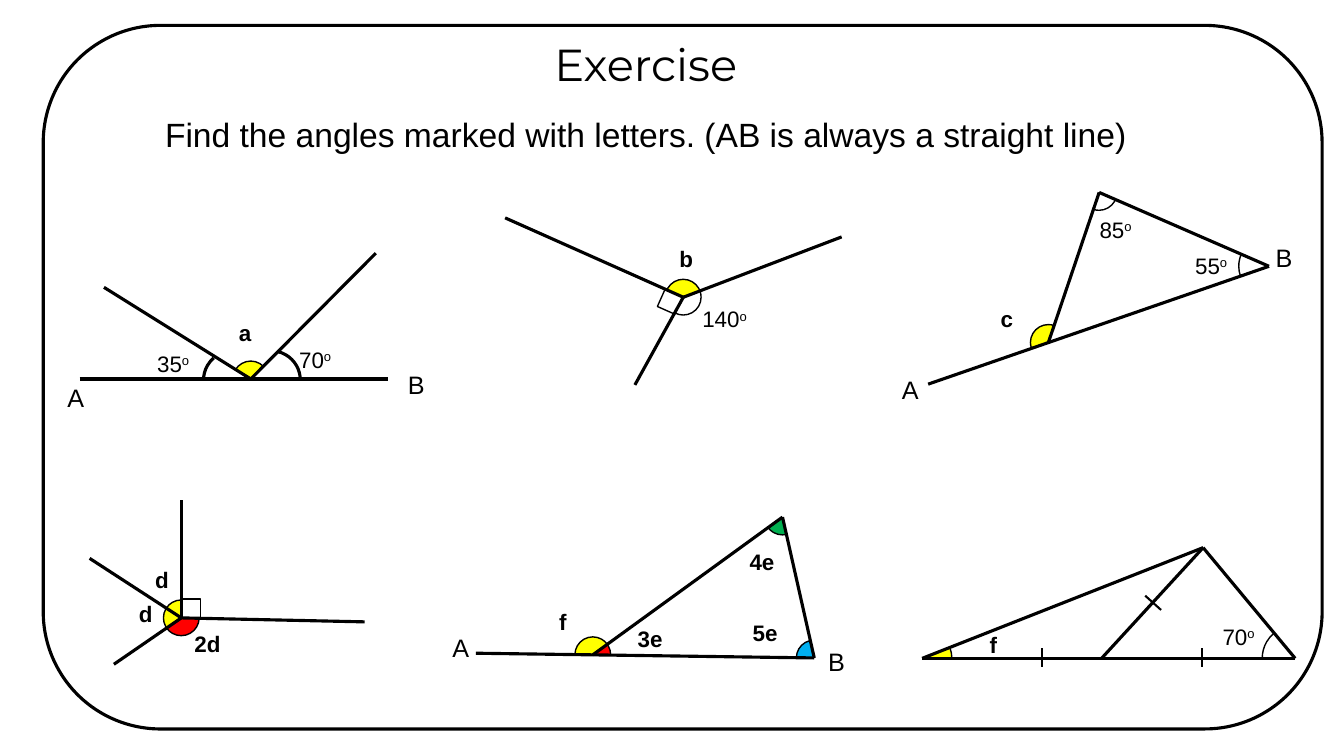
import math

import lxml.etree
import pptx
import pptx.dml.color
import pptx.enum.shapes
import pptx.enum.text
import pptx.oxml.ns
import pptx.util

Cm = pptx.util.Cm
Pt = pptx.util.Pt
MSO = pptx.enum.shapes.MSO_SHAPE
rgb = pptx.dml.color.RGBColor.from_string
BLACK, WHITE, YELLOW, RED = "000000", "FFFFFF", "FFFF00", "FF0000"
GREEN, BLUE = "00B050", "00B0F0"
RADIUS, SQUARE, THICK = 0.45, 0.48, 2.25


def add_shape(kind, x, y, w, h, fill=None, weight=1):
    sp = s.shapes.add_shape(kind, Cm(x), Cm(y), Cm(w), Cm(h))
    sp.shadow.inherit = False
    if fill:
        sp.fill.solid()
        sp.fill.fore_color.rgb = rgb(fill)
    else:
        sp.fill.background()
    sp.line.color.rgb = rgb(BLACK)
    sp.line.width = Pt(weight)
    return sp


def add_text(text, x, y, w, h, size, name="Arial", bold=False):
    sp = s.shapes.add_textbox(Cm(x), Cm(y), Cm(w), Cm(h))
    tf = sp.text_frame
    tf.word_wrap = True
    tf.auto_size = pptx.enum.text.MSO_AUTO_SIZE.SHAPE_TO_FIT_TEXT
    p = tf.paragraphs[0]
    for part in [text, "o"] if text.isdigit() else [text]:
        r = p.add_run()
        r.text = part
        for key, value in {"size": Pt(size), "name": name, "bold": bold}.items():
            setattr(r.font, key, value)
        r.font.color.rgb = rgb(BLACK)
    if text.isdigit():
        r.font._element.set("baseline", "30000")
    return p


figures = [
    {"points": {"A": (2.01, 9.55), "B": (9.78, 9.55), "O": (6.32, 9.55),
                "P": (2.62, 7.24), "Q": (9.47, 6.38)},
     "lines": "AB OP OQ",
     "arcs": [("POQ", YELLOW, RADIUS)],
     "labels": [("70", 7.29, 8.59), ("35", 3.71, 8.69), ("a", 5.77, 7.92),
                ("A", 1.45, 9.5), ("B", 10.03, 9.19)]},
    {"points": {"O": (17.22, 7.49), "P": (12.73, 5.49),
                "Q": (21.21, 5.97), "R": (16, 9.7)},
     "lines": "OP OQ OR",
     "square": "POR",
     "arcs": [("POQ", YELLOW, RADIUS), ("QOR", None, RADIUS)],
     "labels": [("b", 16.87, 6.05), ("140", 17.45, 7.57)]},
    {"points": {"A": (23.39, 9.68), "B": (31.98, 6.71),
                "O": (26.42, 8.63), "T": (27.7, 4.85)},
     "lines": "AB OT TB",
     "arcs": [("AOT", YELLOW, RADIUS), ("ABT", None, 0.76),
              ("BTO", None, RADIUS)],
     "labels": [("85", 27.46, 5.31), ("55", 29.87, 6.22), ("c", 24.97, 7.57),
                ("A", 22.48, 9.3), ("B", 31.9, 5.99)]},
    {"points": {"O": (4.57, 15.57), "P": (2.87, 16.74), "Q": (9.19, 15.67),
                "R": (2.26, 14.07), "N": (4.57, 12.6)},
     "lines": "OP OQ OR ON",
     "square": "NOQ",
     "arcs": [("POR", YELLOW, RADIUS), ("RON", YELLOW, RADIUS),
              ("QOP", RED, RADIUS)],
     "labels": [("d", 3.66, 14.15), ("d", 3.25, 14.99), ("2d", 4.65, 15.75)]},
    {"points": {"A": (11.99, 16.46), "B": (20.52, 16.58),
                "O": (14.94, 16.5), "T": (19.72, 13.03)},
     "lines": "AB OT TB",
     "arcs": [("ABT", BLUE, RADIUS), ("TOB", RED, RADIUS),
              ("AOT", YELLOW, RADIUS), ("BTO", GREEN, RADIUS)],
     "labels": [("3e", 15.82, 15.62), ("5e", 18.72, 15.47), ("4e", 18.64, 13.69),
                ("f", 13.84, 15.21), ("A", 11.15, 15.82), ("B", 20.62, 16.15)]},
    {"points": {"A": (23.24, 16.59), "B": (32.64, 16.59),
                "T": (30.32, 13.8), "M": (27.76, 16.59)},
     "lines": "AB AT TB TM",
     "arcs": [("TAB", YELLOW, 0.75), ("ABT", None, 0.83)],
     "labels": [("70", 30.56, 15.57), ("f", 24.69, 15.77)]},
]

prs = pptx.Presentation()
prs.slide_width = Cm(33.87)
prs.slide_height = Cm(19.05)
s = prs.slides.add_slide(prs.slide_layouts[6])

add_shape(MSO.ROUNDED_RECTANGLE, 1.09, 0.64, 32.23, 17.73, WHITE, THICK)
add_text("Find the angles marked with letters. (AB is always a straight line)",
         3.91, 2.74, 25.5, 1.27, 24)

arcs = [(6.83, 9.58, 0.74, 282.7, 0, None, THICK),
        (5.87, 9.58, 0.74, 180.3, 229.2, None, THICK)]
lines = []
for x, y, dx, dy in [(26.26, 16.57, 0, 0.24), (30.3, 16.57, 0, 0.24),
                     (29.06, 15.19, 0.2, 0.18)]:
    lines.append((x - dx, y - dy, x + dx, y + dy, 1.5))

for figure in figures:
    points = figure["points"]
    corners = [(name, fill, radius, False) for name, fill, radius in figure["arcs"]]
    if "square" in figure:
        corners.append((figure["square"], None, 0, True))
    for (first, vertex, last), fill, radius, right in corners:
        x, y = points[vertex]
        start, end = [math.atan2(points[k][1] - y, points[k][0] - x)
                      for k in (first, last)]
        if right:
            x += SQUARE / 2 * (math.cos(start) + math.cos(end) - 1)
            y += SQUARE / 2 * (math.sin(start) + math.sin(end) - 1)
            sp = add_shape(MSO.RECTANGLE, x, y, SQUARE, SQUARE)
            sp.rotation = round(math.degrees(start) % 90, 1)
        else:
            arcs.append((x, y, radius, math.degrees(start) % 360,
                         math.degrees(end) % 360, fill, 1))
    for start, end in figure["lines"].split():
        lines.append((*points[start], *points[end], THICK))

for x, y, radius, start, end, fill, weight in arcs:
    sp = add_shape(MSO.ARC, x - radius, y - radius, 2 * radius, 2 * radius,
                   fill, weight)
    sp.adjustments[0] = start * 0.6
    sp.adjustments[1] = end * 0.6

for x1, y1, x2, y2, weight in lines:
    line = s.shapes.add_connector(pptx.enum.shapes.MSO_CONNECTOR.STRAIGHT,
                                  Cm(x1), Cm(y1), Cm(x2), Cm(y2))
    line.line.color.rgb = rgb(BLACK)
    line.line.width = Pt(weight)
    lxml.etree.SubElement(line._element.spPr, pptx.oxml.ns.qn("a:effectLst"))

for figure in figures:
    for text, x, y in figure["labels"]:
        if text.isupper():
            add_text(text, x, y, 0.76, 1.02, 18)
        elif text.isdigit():
            add_text(text, x, y, 1.73, 0.94, 16)
        else:
            add_text(text, x, y, 0.46 + 0.45 * len(text), 0.94, 16, bold=True)

p = add_text("Exercise", 13.06, 0.79, 6.43, 1.63, 32, "Montserrat")
p.alignment = pptx.enum.text.PP_ALIGN.CENTER

prs.save("out.pptx")
